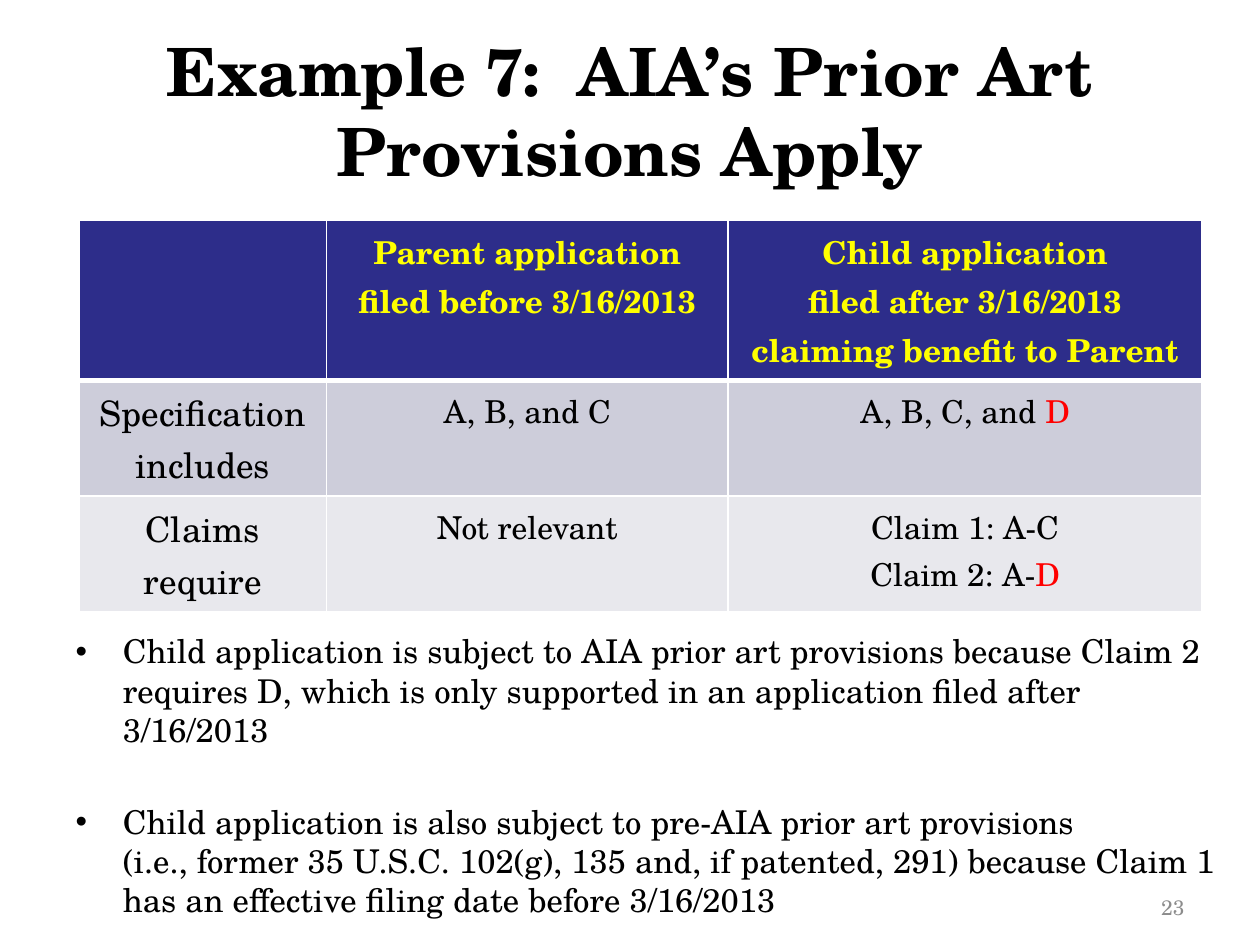
from dataclasses import dataclass

from pptx import Presentation
from pptx.dml.color import RGBColor
from pptx.enum.text import MSO_ANCHOR, MSO_AUTO_SIZE, PP_ALIGN
from pptx.oxml.ns import qn
from pptx.util import Inches, Pt
from lxml.etree import SubElement

TITLE = "Example 7:  AIA’s Prior Art Provisions Apply"
PAGE = "23"

# Each cell is a list of paragraphs; "*" starts text in the highlight colour.
ROWS = [
    [[], ["Parent application filed before 3/16/2013"],
     ["Child application\vfiled after 3/16/2013 claiming benefit to Parent"]],
    [["Specification includes"], ["A, B, and C"], ["A, B, C, and *D"]],
    [["Claims require"], ["Not relevant"], ["Claim 1: A-C", "Claim 2: A-*D"]],
]
CONCLUSIONS = [
    "Child application is subject to AIA prior art provisions because Claim 2 "
    "requires D, which is only supported in an application filed after 3/16/2013",
    "Child application is also subject to pre-AIA prior art provisions\v"
    "(i.e., former 35 U.S.C. 102(g), 135 and, if patented, 291) because Claim 1 "
    "has an effective filing date before 3/16/2013",
]

COLUMN_WIDTHS = [1.96, 3.19, 3.76]
ROW_HEIGHTS = [1.25, 0.92, 0.91]


@dataclass(frozen=True)
class Theme:
    font: str = "TeX Gyre Schola"
    text: str = "000000"
    heading: str = "FFFF00"
    highlight: str = "FF0000"
    page: str = "8C8C8C"
    border: str = "FFFFFF"
    row_fills: tuple = ("2D2D8A", "CDCDDA", "E8E8ED")
    title_size: float = 38
    body_size: float = 18.7
    label_size: float = 20
    cell_size: float = 18
    page_size: float = 12
    heading_leading: float = 28
    label_leading: float = 29.5
    cell_leading: float = 27


THEME = Theme()


def style(paragraph, size, color=THEME.text, bold=False):
    for run in paragraph.runs:
        font = run.font
        font.name, font.size, font.bold = THEME.font, Pt(size), bold
        font.color.rgb = RGBColor.from_string(color)


def place(shape, left, top, width, height):
    shape.left, shape.top = Inches(left), Inches(top)
    shape.width, shape.height = Inches(width), Inches(height)
    shape.text_frame.auto_size = MSO_AUTO_SIZE.NONE


def draw_borders(cell, row):
    properties = cell._tc.get_or_add_tcPr()
    heading_edge = {0: "lnB", 1: "lnT"}.get(row)
    for edge in ("lnL", "lnR", "lnT", "lnB"):
        width = Pt(3 if edge == heading_edge else 1)
        line = SubElement(properties, qn(f"a:{edge}"), w=str(width))
        fill = SubElement(line, qn("a:solidFill"))
        SubElement(fill, qn("a:srgbClr"), val=THEME.border)


def fill_cell(cell, row, column, lines):
    draw_borders(cell, row)
    cell.fill.solid()
    cell.fill.fore_color.rgb = RGBColor.from_string(THEME.row_fills[row])
    if row == 0:
        size, leading, color = THEME.cell_size, THEME.heading_leading, THEME.heading
    elif column == 0:
        size, leading, color = THEME.label_size, THEME.label_leading, THEME.text
    else:
        size, leading, color = THEME.cell_size, THEME.cell_leading, THEME.text
    frame = cell.text_frame
    for index, line in enumerate(lines):
        paragraph = frame.add_paragraph() if index else frame.paragraphs[0]
        plain, _, marked = line.partition("*")
        paragraph.text = plain
        paragraph.alignment = PP_ALIGN.CENTER
        paragraph.line_spacing = Pt(leading)
        style(paragraph, size, color, bold=row == 0)
        if marked:
            run = paragraph.add_run()
            run.text = marked
            run.font.name, run.font.size, run.font.bold = THEME.font, Pt(size), False
            run.font.color.rgb = RGBColor.from_string(THEME.highlight)


def add_comparison(slide):
    table = slide.shapes.add_table(
        len(ROWS), len(COLUMN_WIDTHS), Inches(0.63), Inches(1.75),
        Inches(sum(COLUMN_WIDTHS)), Inches(sum(ROW_HEIGHTS))).table
    for column, width in zip(table.columns, COLUMN_WIDTHS):
        column.width = Inches(width)
    for row, height in zip(table.rows, ROW_HEIGHTS):
        row.height = Inches(height)
    for row, cells in enumerate(ROWS):
        for column, lines in enumerate(cells):
            fill_cell(table.cell(row, column), row, column, lines)


def add_conclusions(body):
    place(body, 0.5, 4.96, 9.25, 2.4)
    frame = body.text_frame
    for index, conclusion in enumerate(CONCLUSIONS):
        paragraph = frame.add_paragraph() if index else frame.paragraphs[0]
        paragraph.text = conclusion
        paragraph.space_before = Pt(30 if index else 0)
        style(paragraph, THEME.body_size)


def main():
    deck = Presentation()
    deck.slide_width, deck.slide_height = Inches(10), Inches(7.5)
    slide = deck.slides.add_slide(deck.slide_layouts[1])

    title = slide.shapes.title
    place(title, 0.5, 0.25, 9, 1.25)
    title.text_frame.text = TITLE
    style(title.text_frame.paragraphs[0], THEME.title_size, bold=True)

    add_conclusions(slide.placeholders[1])
    add_comparison(slide)

    page = slide.shapes.add_textbox(0, 0, 0, 0)
    place(page, 7.17, 6.83, 2.33, 0.52)
    page.text_frame.word_wrap = True
    page.text_frame.vertical_anchor = MSO_ANCHOR.BOTTOM
    page.text_frame.text = PAGE
    page.text_frame.paragraphs[0].alignment = PP_ALIGN.RIGHT
    style(page.text_frame.paragraphs[0], THEME.page_size, THEME.page)

    deck.save("out.pptx")


if __name__ == "__main__":
    main()
